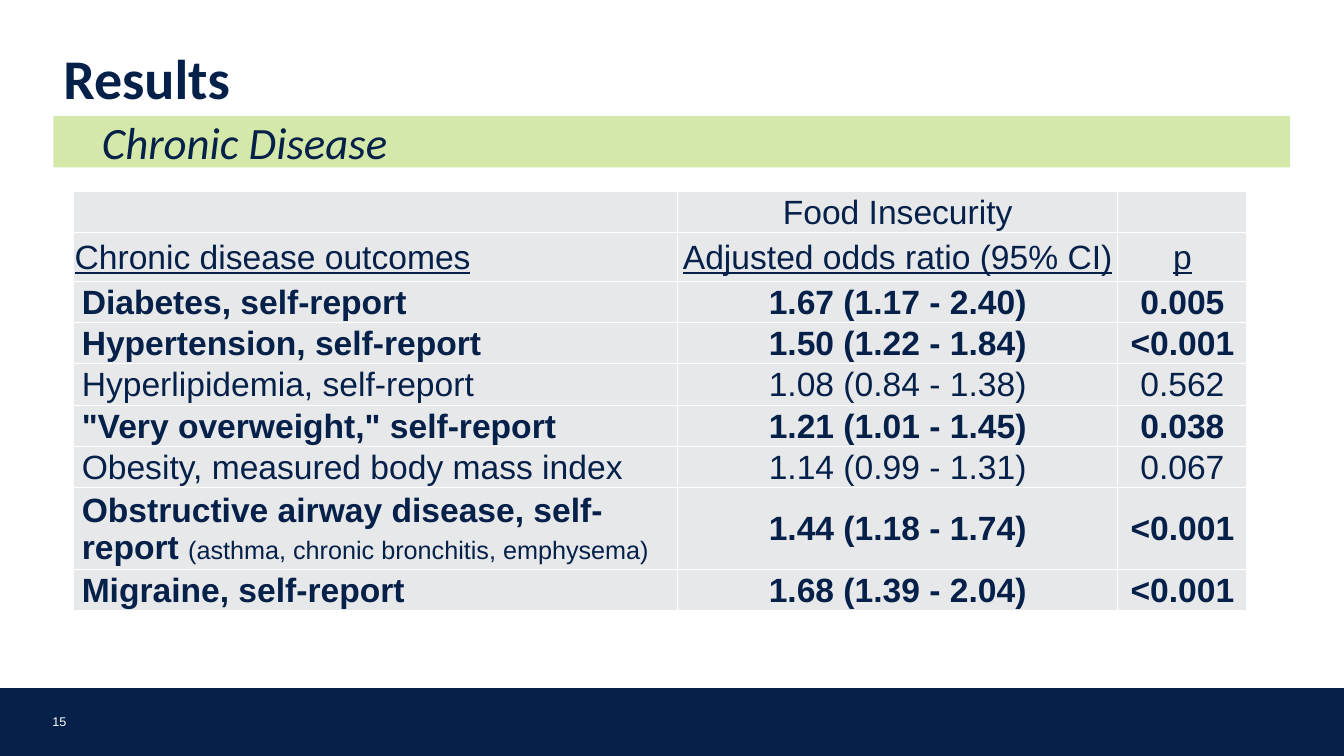
from lxml.etree import SubElement
from pptx import Presentation
from pptx.dml.color import RGBColor
from pptx.enum.shapes import MSO_SHAPE
from pptx.enum.text import MSO_ANCHOR, PP_ALIGN
from pptx.oxml.ns import qn
from pptx.util import Pt

NAVY, GREEN, GREY, WHITE = "052049", "D4E9A9", "E7E8E9", "FFFFFF"

COLS = [431.3, 314.6, 92.2]
TALL = {1: 34.6, 3: 29.5, 7: 54}
HEADS = [
    ["", "Food Insecurity", ""],
    ["Chronic disease outcomes", "Adjusted odds ratio (95% CI)", "p"],
]
# Outcome, adjusted odds ratio, p, significant
RESULTS = [
    ("Diabetes, self-report", "1.67 (1.17 - 2.40)", "0.005", True),
    ("Hypertension, self-report", "1.50 (1.22 - 1.84)", "<0.001", True),
    ("Hyperlipidemia, self-report", "1.08 (0.84 - 1.38)", "0.562", False),
    ('"Very overweight," self-report', "1.21 (1.01 - 1.45)", "0.038", True),
    ("Obesity, measured body mass index", "1.14 (0.99 - 1.31)", "0.067", False),
    ("Obstructive airway disease, self-report ", "1.44 (1.18 - 1.74)", "<0.001", True),
    ("Migraine, self-report", "1.68 (1.39 - 2.04)", "<0.001", True),
]
NOTES = {7: "(asthma, chronic bronchitis, emphysema)"}


def color(code):
    return RGBColor.from_string(code)


def style(font, size, face="Arial", tint=NAVY, bold=False, italic=False):
    font.size, font.name = Pt(size), face
    font.color.rgb = color(tint)
    font.bold, font.italic = bold, italic


def bar(slide, left, top, width, height, tint):
    rect = slide.shapes.add_shape(
        MSO_SHAPE.RECTANGLE, Pt(left), Pt(top), Pt(width), Pt(height))
    rect.shadow.inherit = False
    rect.fill.solid()
    rect.fill.fore_color.rgb = color(tint)
    rect.line.fill.background()
    return rect


def footer(slide, left, top, width, height):
    band = bar(slide, left, top, width, height, NAVY)
    band.line.color.rgb = color(NAVY)
    band.line.width = Pt(1.5)
    box = slide.shapes.add_textbox(Pt(left + 37.4), Pt(top + 15.8), Pt(26), Pt(12.2))
    frame = box.text_frame
    frame.word_wrap = True
    frame.vertical_anchor = MSO_ANCHOR.BOTTOM
    frame.margin_left = frame.margin_right = 0
    frame.margin_top = frame.margin_bottom = 0
    frame.text = "15"
    style(frame.paragraphs[0].runs[0].font, 9, tint=WHITE)


def title(slide, left, top, width, height):
    box = slide.shapes.add_textbox(Pt(left), Pt(top), Pt(width), Pt(height))
    frame = box.text_frame
    frame.word_wrap = True
    frame.text = "Results"
    para = frame.paragraphs[0]
    para.line_spacing = 0.85
    style(para.runs[0].font, 40, "Calibri", bold=True)


def topic(slide, left, top, width, height):
    frame = bar(slide, left, top, width, height, GREEN).text_frame
    frame.vertical_anchor = MSO_ANCHOR.TOP
    frame.margin_left = Pt(34.6)
    frame.text = "Chronic Disease"
    para = frame.paragraphs[0]
    para.alignment = PP_ALIGN.LEFT
    para.line_spacing = 0.9
    style(para.runs[0].font, 32, "Calibri", italic=True)


def border(cell):
    """Draw white lines on all four sides; call before the fill is set."""
    props = cell._tc.get_or_add_tcPr()
    for side in ("a:lnL", "a:lnR", "a:lnT", "a:lnB"):
        line = SubElement(props, qn(side), w=str(Pt(1)))
        fill = SubElement(line, qn("a:solidFill"))
        SubElement(fill, qn("a:srgbClr"), val=WHITE)


def write(cell, text, inset, align, bold, under, note):
    border(cell)
    cell.fill.solid()
    cell.fill.fore_color.rgb = color(GREY)
    cell.vertical_anchor = MSO_ANCHOR.MIDDLE
    cell.margin_left = Pt(inset)
    cell.margin_right = cell.margin_top = Pt(0.7)
    cell.margin_bottom = 0
    cell.text = text
    para = cell.text_frame.paragraphs[0]
    para.alignment = align
    for run in para.runs:
        style(run.font, 24, bold=bold)
        run.font.underline = under
    if note:
        run = para.add_run()
        run.text = note
        style(run.font, 18)


def odds(slide, left, top):
    rows = [(head, False) for head in HEADS] + [(row[:3], row[3]) for row in RESULTS]
    sizes = [TALL.get(r, 26.8) for r in range(len(rows))]
    grid = slide.shapes.add_table(
        len(rows), len(COLS), Pt(left), Pt(top), Pt(sum(COLS)), Pt(sum(sizes))).table
    for col, width in zip(grid.columns, COLS):
        col.width = Pt(width)
    for r, (texts, bold) in enumerate(rows):
        grid.rows[r].height = Pt(sizes[r])
        for c, text in enumerate(texts):
            inset = 5.8 if c == 0 and r >= len(HEADS) else 0.7
            align = PP_ALIGN.CENTER if c else PP_ALIGN.LEFT
            note = NOTES.get(r) if c == 0 else None
            write(grid.cell(r, c), text, inset, align, bold, r == 1, note)


def main():
    deck = Presentation()
    deck.slide_width, deck.slide_height = Pt(960), Pt(540)
    slide = deck.slides.add_slide(deck.slide_layouts[6])
    footer(slide, 0, 492.5, 960, 47.5)
    odds(slide, 52.6, 136.8)
    topic(slide, 38.2, 82.8, 883.4, 36.7)
    title(slide, 38.2, 34.6, 637.2, 49)
    deck.save("out.pptx")


if __name__ == "__main__":
    main()
